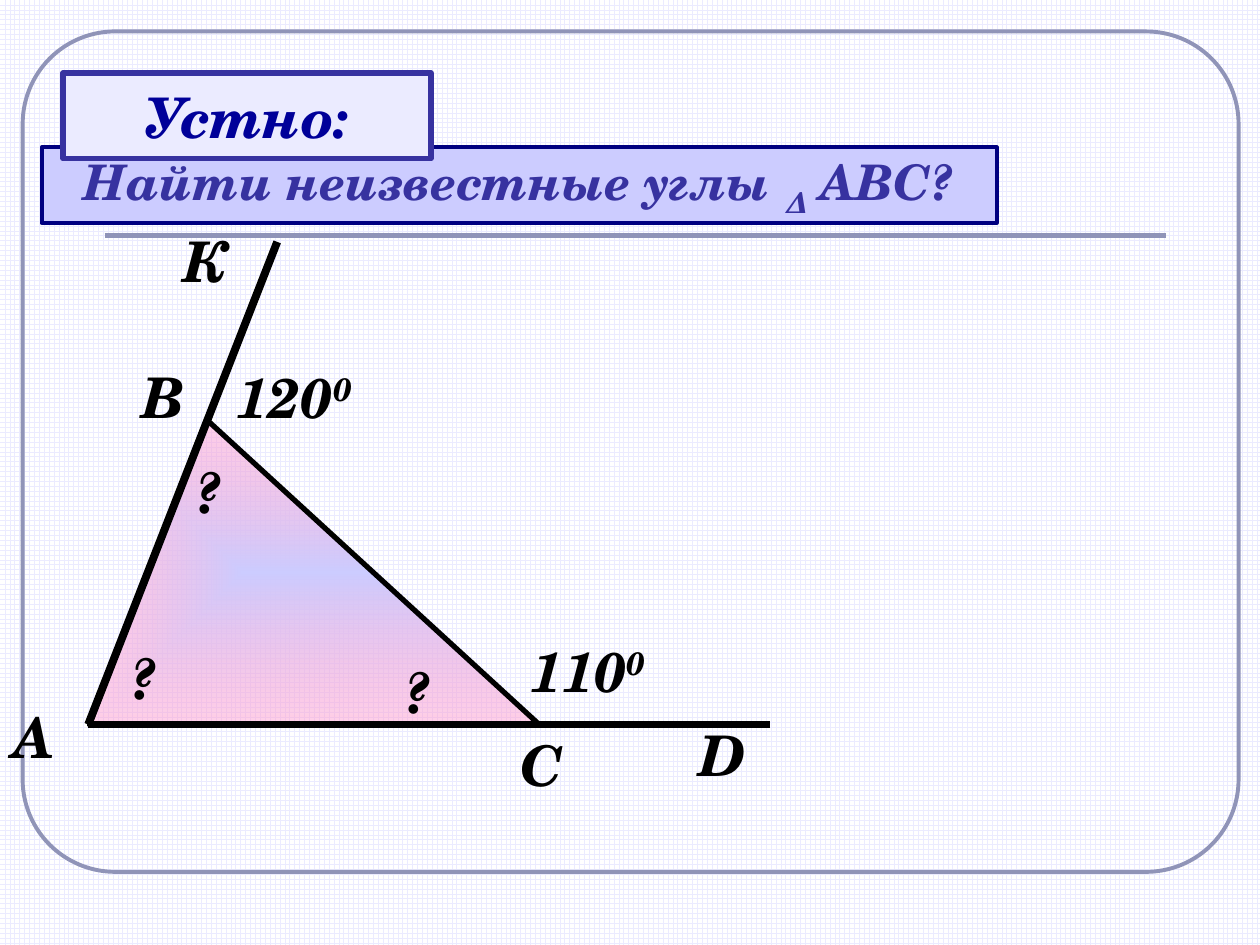
"""Build a geometry slide asking for the unknown angles of triangle ABC."""
from dataclasses import dataclass

from lxml import etree
from pptx import Presentation
from pptx.dml.color import RGBColor
from pptx.enum.dml import MSO_PATTERN
from pptx.enum.shapes import MSO_CONNECTOR, MSO_SHAPE
from pptx.enum.text import MSO_ANCHOR, MSO_AUTO_SIZE, PP_ALIGN
from pptx.oxml import parse_xml
from pptx.oxml.ns import nsdecls, qn
from pptx.util import Inches, Pt

STRAIGHT = MSO_CONNECTOR.STRAIGHT
RECTANGLE = MSO_SHAPE.RECTANGLE
ROUNDED = MSO_SHAPE.ROUNDED_RECTANGLE
LARGE_GRID = MSO_PATTERN.LARGE_GRID
MIDDLE, TOP = MSO_ANCHOR.MIDDLE, MSO_ANCHOR.TOP
CENTER, LEFT = PP_ALIGN.CENTER, PP_ALIGN.LEFT
FIT, FIXED = MSO_AUTO_SIZE.SHAPE_TO_FIT_TEXT, MSO_AUTO_SIZE.NONE


@dataclass(frozen=True)
class Theme:
    font: str = "TeX Gyre Schola"
    ink: str = "000000"
    paper: str = "FFFFFF"
    pale: str = "EBEBFF"
    lilac: str = "CCCCFF"
    pink: str = "FF99CC"
    frame: str = "9094B8"
    navy: str = "000080"
    violet: str = "3732A0"
    heading: str = "000099"
    large: int = 32
    medium: int = 28


THEME = Theme()
WIDTH, HEIGHT = Inches(10), Inches(7.5)

QUESTION = [("Найти неизвестные углы ", 0), ("Δ", -25), (" АВС?", 0)]
HEADING = [("Устно:", 0)]
QUESTION_AREA = (3.3, 15.6, 75.8, 8)
HEADING_AREA = (5, 7.73, 29.2, 9.07)
FRAME_AREA = (1.8, 3.33, 96.5, 88.93)

TRIANGLE = [(7.1, 76.67), (42.8, 76.67), (16.4, 44.4)]
LINES = [
    ((8.3, 24.93), (92.5, 24.93), THEME.frame, 3),
    ((7, 76.67), (61.1, 76.67), THEME.ink, 4.5),
    ((7, 76.67), (22, 25.6), THEME.ink, 4.5),
]
LABEL_HEIGHT = 8.4
LABELS = [
    ([("А", 0)], 0, 73.73, 5.4),
    ([("B", 0)], 10.3, 37.73, 5.4),
    ([("C", 0)], 40.3, 76.67, 5.2),
    ([("К", 0)], 13.6, 23.33, 5.6),
    ([("D", 0)], 54.5, 75.6, 5.7),
    ([("120", 0), ("0", 30)], 17.8, 37.73, 12.1),
    ([("110", 0), ("0", 30)], 41.1, 66.67, 11.5),
    ([("?", 0)], 9.4, 67.47, 4.7),
    ([("?", 0)], 14.5, 47.73, 4.7),
    ([("?", 0)], 31.1, 68.93, 4.7),
]


def across(share):
    return round(WIDTH * share / 100)


def down(share):
    return round(HEIGHT * share / 100)


def place(area):
    left, top, width, height = area
    return across(left), down(top), across(width), down(height)


def write(box, spans, size=THEME.large, color=THEME.ink, align=LEFT,
          anchor=TOP, wrap=False, fit=FIT):
    frame = box.text_frame
    frame.word_wrap, frame.auto_size = wrap, fit
    frame.vertical_anchor = anchor
    para = frame.paragraphs[0]
    para.alignment, para.space_before = align, Pt(0)
    for text, baseline in spans:
        span = para.add_run()
        span.text = text
        font = span.font
        font.name, font.size = THEME.font, Pt(size)
        font.bold = font.italic = True
        font.color.rgb = RGBColor.from_string(color)
        if baseline:
            span._r.get_or_add_rPr().set("baseline", str(baseline * 1000))


def outline(item, color, weight):
    item.line.color.rgb = RGBColor.from_string(color)
    item.line.width = Pt(weight)


def paint(shape, color):
    shape.fill.solid()
    shape.fill.fore_color.rgb = RGBColor.from_string(color)


def draw_frame(page):
    frame = page.shapes.add_shape(ROUNDED, *place(FRAME_AREA))
    frame.adjustments[0] = 0.11
    frame.shadow.inherit = False
    frame.fill.background()
    outline(frame, THEME.frame, 2.25)


def draw_line(page, start, end, color, weight):
    line = page.shapes.add_connector(
        STRAIGHT, across(start[0]), down(start[1]), across(end[0]), down(end[1]))
    outline(line, color, weight)
    etree.SubElement(line._element.spPr, qn("a:effectLst"))


def draw_triangle(page):
    corners = [(across(x), down(y)) for x, y in TRIANGLE]
    builder = page.shapes.build_freeform(*corners[0])
    builder.add_line_segments(corners[1:], close=True)
    triangle = builder.convert_to_shape()
    triangle.shadow.inherit = False
    outline(triangle, THEME.ink, 3)
    gradient = parse_xml(
        f'<a:gradFill {nsdecls("a")} rotWithShape="1"><a:gsLst>'
        f'<a:gs pos="0"><a:srgbClr val="{THEME.lilac}"/></a:gs>'
        f'<a:gs pos="100000"><a:srgbClr val="{THEME.pink}">'
        '<a:alpha val="45000"/></a:srgbClr></a:gs></a:gsLst>'
        '<a:path path="rect"><a:fillToRect l="50000" t="50000" r="50000" b="50000"/>'
        '</a:path></a:gradFill>')
    triangle._element.spPr.find(qn("a:custGeom")).addnext(gradient)


def main():
    deck = Presentation()
    deck.slide_width, deck.slide_height = WIDTH, HEIGHT
    page = deck.slides.add_slide(deck.slide_layouts[5])
    backdrop = page.background.fill
    backdrop.patterned()
    backdrop.pattern = LARGE_GRID
    backdrop.fore_color.rgb = RGBColor.from_string(THEME.pale)
    backdrop.back_color.rgb = RGBColor.from_string(THEME.paper)

    question = page.shapes.title
    question.left, question.top, question.width, question.height = place(QUESTION_AREA)
    paint(question, THEME.lilac)
    outline(question, THEME.navy, 2.25)
    write(question, QUESTION, size=THEME.medium, color=THEME.violet,
          align=CENTER, anchor=MIDDLE, wrap=True, fit=FIXED)

    draw_frame(page)
    draw_triangle(page)
    for line in LINES:
        draw_line(page, *line)
    for spans, left, top, width in LABELS:
        label = page.shapes.add_textbox(*place((left, top, width, LABEL_HEIGHT)))
        write(label, spans)

    heading = page.shapes.add_shape(RECTANGLE, *place(HEADING_AREA))
    heading.shadow.inherit = False
    paint(heading, THEME.pale)
    outline(heading, THEME.violet, 3)
    write(heading, HEADING, color=THEME.heading, align=CENTER,
          anchor=MIDDLE, wrap=True, fit=FIXED)
    deck.save("out.pptx")


if __name__ == "__main__":
    main()
